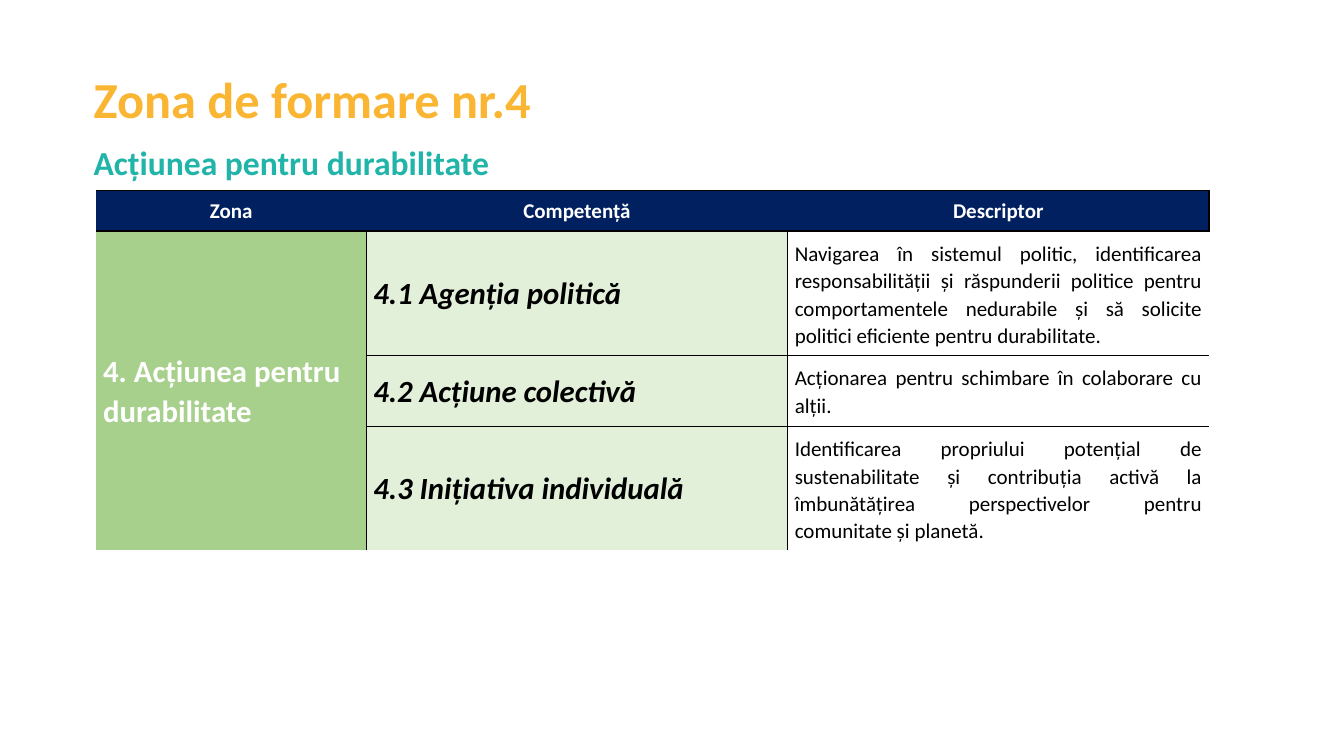
import pptx
import pptx.util
import pptx.dml.color
import pptx.enum.text
import pptx.oxml
import pptx.oxml.ns

Cm, Pt = pptx.util.Cm, pptx.util.Pt
Align = pptx.enum.text.PP_ALIGN
Anchor = pptx.enum.text.MSO_ANCHOR

COLORS = {
    "gold": "FAB632", "teal": "21B4A9", "navy": "002060", "green": "A8D08D",
    "pale": "E2EFD9", "white": "FFFFFF", "black": "000000",
}
PLAIN = "{2D5ABB26-0587-4C30-8999-92F81FD0307C}"  # table style without grid
SIDES = "LRTB"


def color(name):
    return pptx.dml.color.RGBColor.from_string(COLORS[name])


class Page:
    font = "Calibri"
    inset = 0.18
    leading = 1.06

    def __init__(self, deck):
        self.slide = deck.slides.add_slide(deck.slide_layouts[6])

    def style(self, para, size, ink, bold=True, italic=False):
        font = para.font
        font.name, font.size = self.font, Pt(size)
        font.bold, font.italic = bold, italic
        font.color.rgb = color(ink)

    def text(self, words, box, size, ink):
        frame = self.slide.shapes.add_textbox(*map(Cm, box)).text_frame
        frame.word_wrap = True
        frame.auto_size = pptx.enum.text.MSO_AUTO_SIZE.SHAPE_TO_FIT_TEXT
        frame.text = words
        self.style(frame.paragraphs[0], size, ink)

    def table(self, left, top, cols, rows):
        shape = self.slide.shapes.add_table(
            len(rows), len(cols), Cm(left), Cm(top), Cm(sum(cols)), Cm(sum(rows)))
        table = shape.table
        table.first_row = table.horz_banding = False
        table._tbl.tblPr.find(pptx.oxml.ns.qn("a:tableStyleId")).text = PLAIN
        for col, width in zip(table.columns, cols):
            col.width = Cm(width)
        for row, height in zip(table.rows, rows):
            row.height = Cm(height)
        return table

    def cell(self, cell, words, size, ink="black", fill=None, align=Align.JUSTIFY,
             anchor=Anchor.MIDDLE, top=0, edges="", **face):
        cell.margin_left = cell.margin_right = Cm(self.inset)
        cell.margin_top, cell.margin_bottom = Cm(top), 0
        cell.vertical_anchor = anchor
        cell.text = words
        para = cell.text_frame.paragraphs[0]
        para.alignment, para.line_spacing = align, self.leading
        self.style(para, size, ink, **face)
        if fill:
            cell.fill.solid()
            cell.fill.fore_color.rgb = color(fill)
        else:
            cell.fill.background()
        self.edge(cell, edges)

    def edge(self, cell, edges):
        # Border lines come before the fill, in the order of SIDES
        props = cell._tc.get_or_add_tcPr()
        for spot, side in enumerate(s for s in SIDES if s in edges):
            props.insert(spot, pptx.oxml.parse_xml(
                f'<a:ln{side} {pptx.oxml.ns.nsdecls("a")} w="{Pt(1)}"><a:solidFill>'
                f'<a:srgbClr val="{COLORS["black"]}"/></a:solidFill></a:ln{side}>'))


HEADS = ["Zona", "Competență", "Descriptor"]
SKILLS = [
    ("4.1 Agenția politică",
     "Navigarea în sistemul politic, identificarea responsabilității și răspunderii "
     "politice pentru comportamentele nedurabile și să solicite politici eficiente "
     "pentru durabilitate."),
    ("4.2 Acțiune colectivă",
     "Acționarea pentru schimbare în colaborare cu alții."),
    ("4.3 Inițiativa individuală",
     "Identificarea propriului potențial de sustenabilitate și contribuția activă la "
     "îmbunătățirea perspectivelor pentru comunitate și planetă."),
]
LEFT, TOP, HEAD = 2.42, 4.8, 1.02
COLS = [6.81, 10.62, 10.62]
ROWS = [3.13, 1.79, 3.13]


def main():
    deck = pptx.Presentation()
    deck.slide_width, deck.slide_height = Cm(33.87), Cm(19.05)
    page = Page(deck)

    # Titles
    page.text("Acțiunea pentru durabilitate", (2.11, 3.45, 21.36, 1.28), 24, "teal")
    page.text("Zona de formare nr.4", (2.11, 1.6, 22.8, 1.8), 36, "gold")

    # Header row
    table = page.table(LEFT, TOP, COLS, [HEAD])
    for col, head in enumerate(HEADS):
        page.cell(table.cell(0, col), head, 15, "white", "navy", Align.CENTER,
                  edges="TBR" if head == HEADS[-1] else "TB")

    # Zone, skills and descriptors
    table = page.table(LEFT, TOP + HEAD, COLS, ROWS)
    zone = table.cell(0, 0)
    zone.merge(table.cell(len(ROWS) - 1, 0))
    page.cell(zone, "4. Acțiunea pentru durabilitate", 22, "white", "green",
              Align.LEFT, edges="TR")
    for row, (skill, about) in enumerate(SKILLS):
        edges = "LT" if row == len(SKILLS) - 1 else "LTB"
        page.cell(table.cell(row, 1), skill, 22, fill="pale", italic=True,
                  edges=edges + "R")
        page.cell(table.cell(row, 2), about, 15, anchor=Anchor.TOP, top=0.23,
                  edges=edges, bold=False)

    deck.save("out.pptx")


if __name__ == "__main__":
    main()
